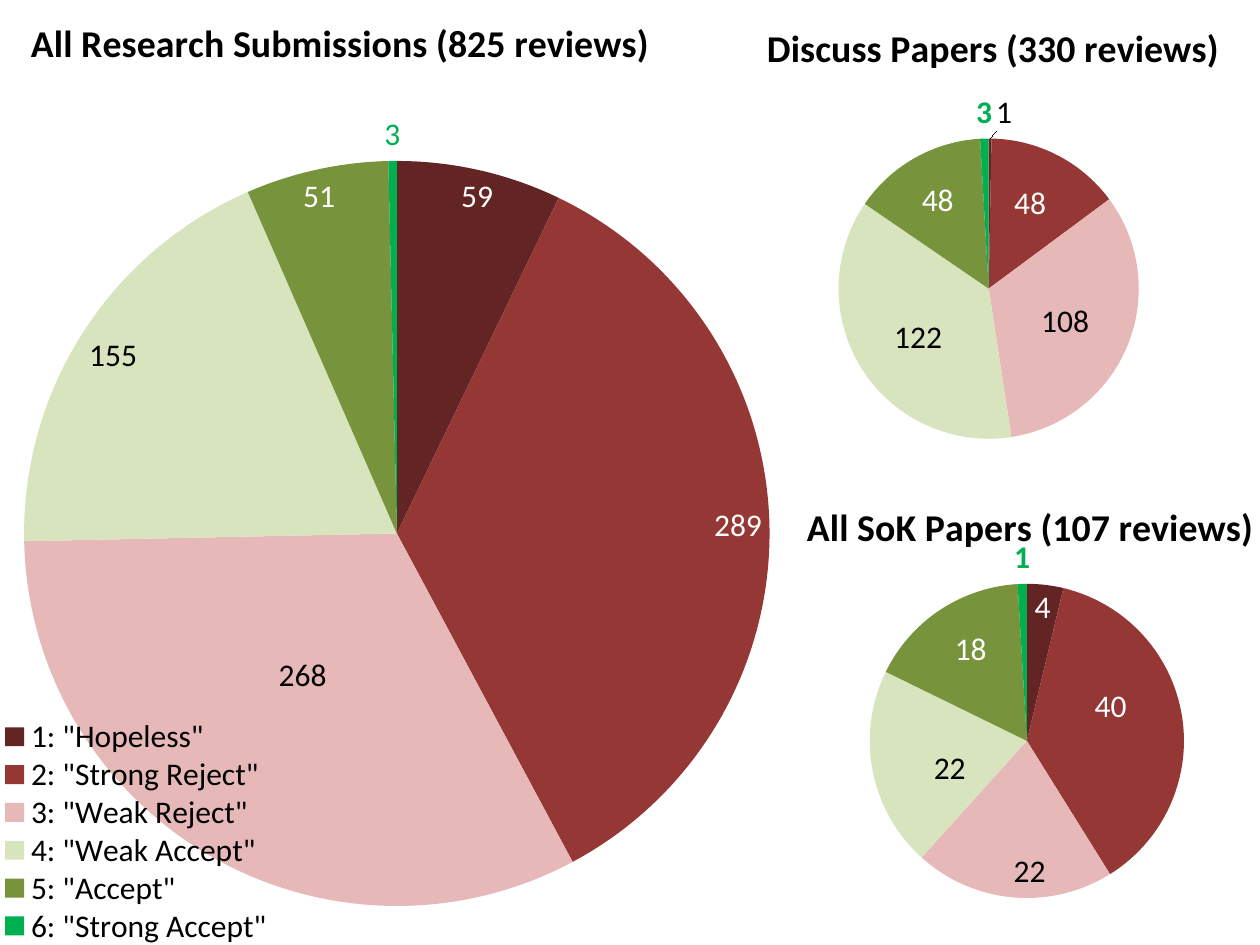
"""Build a slide with three pie charts of review scores."""
from lxml.etree import SubElement
from pptx import Presentation
from pptx.chart.data import CategoryChartData
from pptx.dml.color import RGBColor
from pptx.enum.chart import XL_CHART_TYPE, XL_LABEL_POSITION as POS, XL_LEGEND_POSITION
from pptx.oxml.ns import qn
from pptx.util import Pt

BLACK = RGBColor(0x00, 0x00, 0x00)
WHITE = RGBColor(0xFF, 0xFF, 0xFF)
GREEN = RGBColor(0x00, 0xB0, 0x50)
SCORE_COLORS = [
    RGBColor(0x63, 0x25, 0x23), RGBColor(0x95, 0x37, 0x35), RGBColor(0xE6, 0xB9, 0xB8),
    RGBColor(0xD7, 0xE4, 0xBD), RGBColor(0x77, 0x93, 0x3C), GREEN,
]
LABEL_COLORS = [WHITE, WHITE, BLACK, BLACK, WHITE, GREEN]
SCORES = ['1: "Hopeless"', '2: "Strong Reject"', '3: "Weak Reject"',
          '4: "Weak Accept"', '5: "Accept"', '6: "Strong Accept"']
NUMBERS = ["1", "2", "3", "4", "5", "6"]
FONT, BODY_SIZE, TITLE_SIZE = "Calibri", Pt(18), Pt(21.6)
IN, MID, OUT = POS.INSIDE_END, POS.CENTER, POS.OUTSIDE_END

CHARTS = [
    dict(title="All Research Submissions (825 reviews)", cats=SCORES,
         vals=[59, 289, 268, 155, 51, 3], at=(-114, 0, 852, 540),
         pie=(0.15, 0.17, 0.5, 0.79), title_at=(0.15, 0.01),
         legend_at=(0.13, 0.76, 0.19, 0.24),
         labels=[IN, IN, MID, IN, IN, OUT],
         nudges={0: (0.01, 0), 2: (0, -0.02), 4: (-0.01, 0)}),
    dict(title="Discuss Papers (330 reviews)", cats=NUMBERS,
         vals=[1, 48, 108, 122, 48, 3], at=(366, 0, 402, 264),
         pie=(0.28, 0.3, 0.43, 0.65), title_at=(0.17, 0.03),
         labels=[OUT, MID, MID, MID, MID, OUT],
         nudges={0: (0.02, 0), 1: (0.01, -0.04), 2: (0.01, 0.01),
                 3: (-0.01, 0.02), 4: (-0.02, -0.05)},
         colors={0: BLACK}, bold_top=True),
    dict(title="All SoK Papers (107 reviews)", cats=NUMBERS,
         vals=[4, 40, 22, 22, 18, 1], at=(396, 282, 360, 246),
         pie=(0.28, 0.21, 0.5, 0.73), title_at=(0.17, 0),
         labels=[IN, MID, IN, MID, MID, OUT],
         nudges={0: (0.01, -0.01), 1: (0.01, -0.05), 3: (0, 0.03), 4: (-0.02, -0.06)},
         bold_top=True),
]


def set_layout(parent, index, values, absolute=True, inner=False):
    for old in parent.findall(qn("c:layout")):
        parent.remove(old)
    layout = parent.makeelement(qn("c:layout"))
    parent.insert(index, layout)
    manual = SubElement(layout, qn("c:manualLayout"))
    settings = [("layoutTarget", "inner")] if inner else []
    if absolute:
        settings += [("xMode", "edge"), ("yMode", "edge")]
    settings += zip("xywh", values)
    for tag, value in settings:
        SubElement(manual, qn(f"c:{tag}")).set("val", str(value))


def set_font(font, color, size=BODY_SIZE, bold=False):
    font.name, font.size, font.bold = FONT, size, bold
    font.color.rgb = color


def add_title(chart, text, title_at):
    title = chart.chart_title
    r = title.text_frame.paragraphs[0].add_run()
    r.text = text
    set_font(r.font, BLACK, TITLE_SIZE, True)
    set_layout(title._element, 1, title_at)


def add_legend(chart, legend_at):
    chart.has_legend = True
    chart.legend.position = XL_LEGEND_POSITION.RIGHT
    chart.legend.include_in_layout = True
    set_font(chart.legend.font, BLACK)
    set_layout(chart.legend._element, 1, legend_at)


def format_slices(series, item):
    last = len(SCORE_COLORS) - 1
    for i, (color, position) in enumerate(zip(SCORE_COLORS, item["labels"])):
        point = series.points[i]
        point.format.fill.solid()
        point.format.fill.fore_color.rgb = color
        label = point.data_label
        label_color = item.get("colors", {}).get(i, LABEL_COLORS[i])
        set_font(label.font, label_color, bold=i == last and item.get("bold_top", False))
        label.position = position
    for i, nudge in item["nudges"].items():
        label_xml = series._element.xpath(f"c:dLbls/c:dLbl[c:idx/@val={i}]")[0]
        set_layout(label_xml, 1, nudge, absolute=False)


def add_pie(slide, item):
    data = CategoryChartData()
    data.categories = item["cats"]
    data.add_series("Series 1", item["vals"])
    frame = slide.shapes.add_chart(XL_CHART_TYPE.PIE, *map(Pt, item["at"]), data)
    chart = frame.chart
    set_font(chart.font, BLACK)
    chart.has_legend = False
    chart.plots[0].vary_by_categories = True
    add_title(chart, item["title"], item["title_at"])
    if "legend_at" in item:
        add_legend(chart, item["legend_at"])
    format_slices(chart.plots[0].series[0], item)
    plot_area = chart._chartSpace.find(f".//{qn('c:plotArea')}")
    set_layout(plot_area, 0, item["pie"], inner=True)


def main():
    prs = Presentation()
    prs.slide_width, prs.slide_height = Pt(720), Pt(540)
    s = prs.slides.add_slide(prs.slide_layouts[6])
    for item in CHARTS:
        add_pie(s, item)
    prs.save("out.pptx")


if __name__ == "__main__":
    main()
